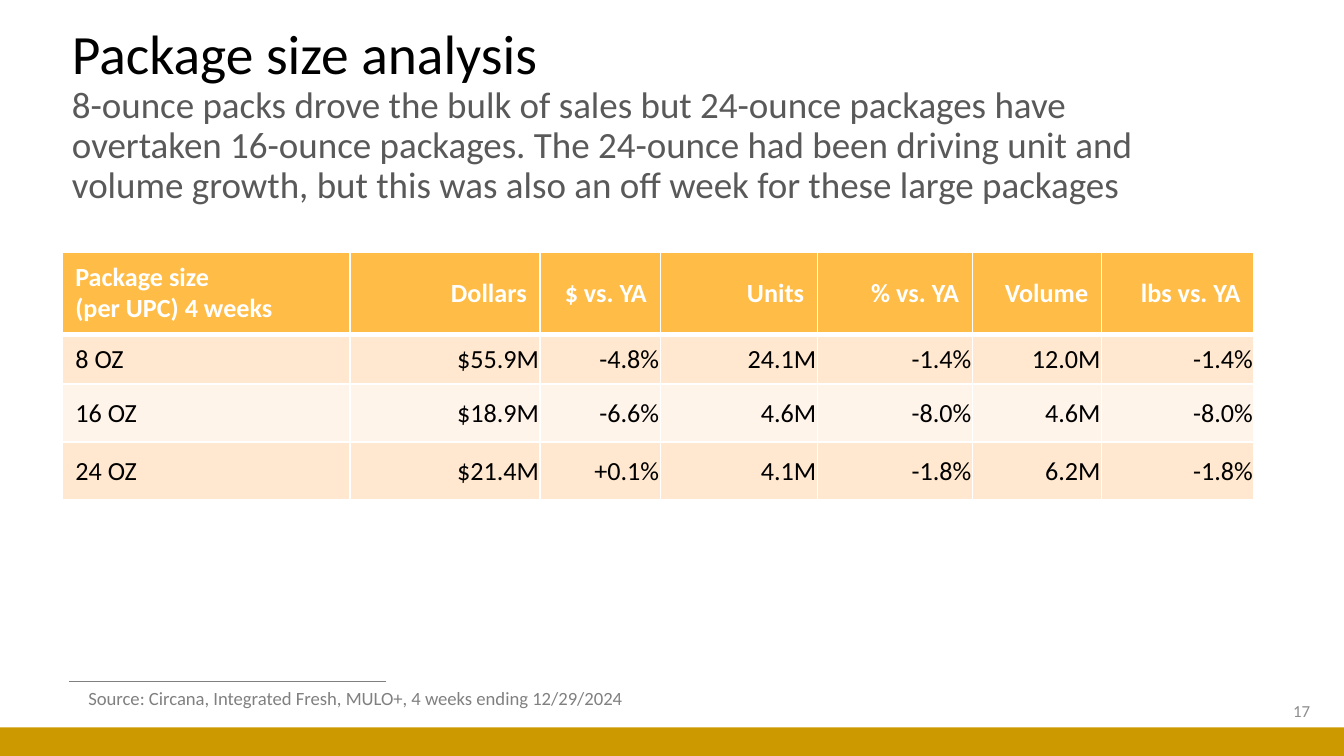
from lxml.etree import SubElement
from pptx import Presentation
from pptx.dml.color import RGBColor as Rgb
from pptx.enum.shapes import MSO_CONNECTOR as Connector, MSO_SHAPE as Shape
from pptx.enum.text import MSO_ANCHOR as Anchor, PP_ALIGN as Align
from pptx.oxml.ns import qn
from pptx.util import Cm, Pt

COLORS = {
    "title": "000000",
    "subtitle": "595959",
    "body": "000000",
    "muted": "808080",
    "page_number": "8C8C8C",
    "footer": "CC9900",
    "header": "FFBD47",
    "header_text": "FFFFFF",
    "band_dark": "FFE8CF",
    "band_light": "FFF4E9",
    "border": "FFFFFF",
}

HEADERS = ["Package size\v(per UPC) 4 weeks", "Dollars", "$ vs. YA", "Units",
           "% vs. YA", "Volume", "lbs vs. YA"]
SALES = [
    ["8 OZ", "$55.9M", "-4.8%", "24.1M", "-1.4%", "12.0M", "-1.4%"],
    ["16 OZ", "$18.9M", "-6.6%", "4.6M", "-8.0%", "4.6M", "-8.0%"],
    ["24 OZ", "$21.4M", "+0.1%", "4.1M", "-1.8%", "6.2M", "-1.8%"],
]
COLUMN_WIDTHS = [5.45, 3.59, 2.27, 2.97, 2.93, 2.44, 2.88]
ROW_HEIGHTS = [1.56, 0.94, 1.09, 1.09]


class SlideBuilder:
    def __init__(self, slide, font="Calibri"):
        self.shapes = slide.shapes
        self.font = font

    def style(self, font, size, color, bold=False):
        font.name = self.font
        font.size = Pt(size)
        font.bold = bold
        font.color.rgb = Rgb.from_string(COLORS[color])

    def bar(self, left, top, width, height, color):
        bar = self.shapes.add_shape(Shape.RECTANGLE, Cm(left), Cm(top), Cm(width), Cm(height))
        bar.shadow.inherit = False
        bar.fill.solid()
        bar.fill.fore_color.rgb = Rgb.from_string(COLORS[color])
        bar.line.fill.background()

    def rule(self, left, top, width, color, weight):
        rule = self.shapes.add_connector(Connector.STRAIGHT, Cm(left), Cm(top),
                                         Cm(left + width), Cm(top))
        rule.line.color.rgb = Rgb.from_string(COLORS[color])
        rule.line.width = Pt(weight)
        SubElement(rule._element.spPr, qn("a:effectLst"))

    def text(self, left, top, width, height, lines, align=Align.LEFT,
             anchor=Anchor.MIDDLE, spacing=None, wrap=True):
        """Write (text, size, color) lines as one paragraph with line breaks."""
        frame = self.shapes.add_textbox(Cm(left), Cm(top), Cm(width), Cm(height)).text_frame
        frame.word_wrap = wrap
        frame.vertical_anchor = anchor
        para = frame.paragraphs[0]
        para.alignment = align
        para.line_spacing = spacing
        for index, (text, size, color) in enumerate(lines):
            if index:
                para.add_line_break()
            span = para.add_run()
            span.text = text
            self.style(span.font, size, color)

    def border(self, cell, bottom):
        for side in "LRTB":
            weight = bottom if side == "B" else 1
            line = SubElement(cell._tc.get_or_add_tcPr(), qn(f"a:ln{side}"), w=str(Pt(weight)))
            fill = SubElement(line, qn("a:solidFill"))
            SubElement(fill, qn("a:srgbClr"), val=COLORS["border"])

    def cell(self, cell, text, fill, color, bold, align, bottom):
        self.border(cell, bottom)
        cell.fill.solid()
        cell.fill.fore_color.rgb = Rgb.from_string(COLORS[fill])
        cell.vertical_anchor = Anchor.MIDDLE
        para = cell.text_frame.paragraphs[0]
        para.text = text
        para.alignment = align
        self.style(para.font, 14, color, bold)

    def table(self, left, top, widths, heights, rows):
        table = self.shapes.add_table(len(rows), len(widths), Cm(left), Cm(top),
                                      Cm(sum(widths)), Cm(sum(heights))).table
        for column, width in zip(table.columns, widths):
            column.width = Cm(width)
        for row, height in zip(table.rows, heights):
            row.height = Cm(height)
        for r, texts in enumerate(rows):
            is_header = r == 0
            fill = "header" if is_header else "band_dark" if r % 2 else "band_light"
            color = "header_text" if is_header else "body"
            # The heavy rule below the header is shared with the first data row.
            bottom = 3 if is_header else 1
            for c, text in enumerate(texts):
                cell = table.cell(r, c)
                align = Align.RIGHT if c else Align.LEFT
                self.cell(cell, text, fill, color, is_header, align, bottom)
                if not is_header:
                    cell.margin_top, cell.margin_bottom = Cm(0.02), Cm(0)
                    if c:
                        cell.margin_left = cell.margin_right = Cm(0.02)
                if r == 1:
                    cell._tc.tcPr.find(qn("a:lnT")).set("w", str(Pt(3)))


def main():
    deck = Presentation()
    deck.slide_width, deck.slide_height = Cm(25.4), Cm(14.29)
    page = SlideBuilder(deck.slides.add_slide(deck.slide_layouts[6]))

    page.rule(1.3, 12.89, 6, "muted", 0.5)
    page.bar(0, 13.75, 25.4, 0.54, "footer")
    page.text(1.11, 0.86, 21.66, 2.7, [
        ("Package size analysis", 29.7, "title"),
        ("8-ounce packs drove the bulk of sales but 24-ounce packages have overtaken "
         "16-ounce packages. The 24-ounce had been driving unit and volume growth, "
         "but this was also an off week for these large packages", 19.8, "subtitle"),
    ], spacing=0.9)
    page.text(19.3, 13.06, 5.71, 0.76, [("17", 9, "page_number")], align=Align.RIGHT)
    page.text(1.42, 12.85, 11, 0.68, [
        ("Source: Circana, Integrated Fresh, MULO+, 4 weeks ending 12/29/2024", 10, "muted"),
    ], anchor=Anchor.TOP, wrap=False)
    page.table(1.17, 4.76, COLUMN_WIDTHS, ROW_HEIGHTS, [HEADERS, *SALES])

    deck.save("out.pptx")


if __name__ == "__main__":
    main()
